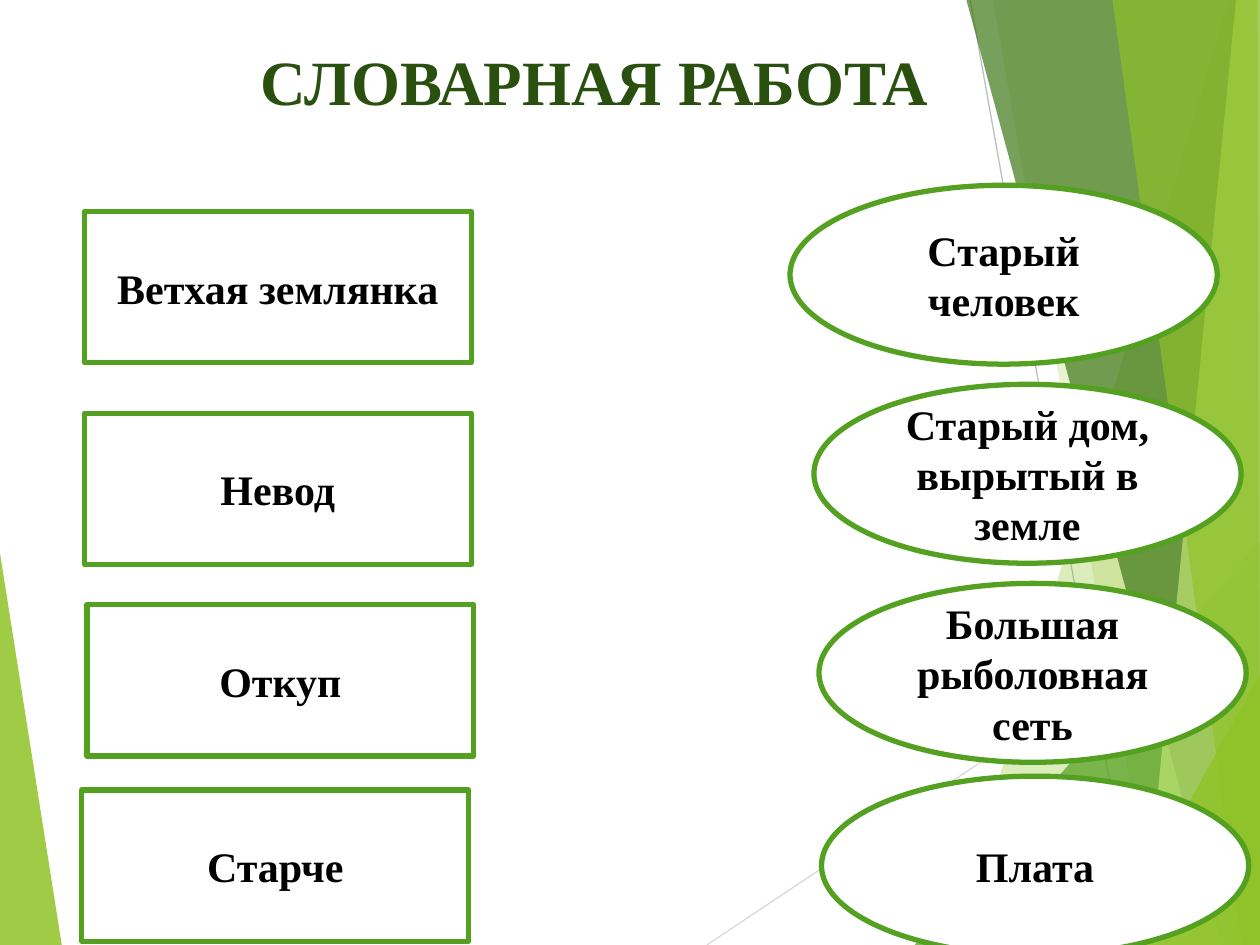
from dataclasses import dataclass

from lxml import etree
from pptx import Presentation
from pptx.dml.color import RGBColor
from pptx.enum.shapes import MSO_CONNECTOR, MSO_SHAPE
from pptx.enum.text import MSO_ANCHOR, PP_ALIGN
from pptx.oxml.ns import qn
from pptx.util import Inches, Pt

RECT = MSO_SHAPE.RECTANGLE
OVAL = MSO_SHAPE.OVAL
LINE = MSO_CONNECTOR.STRAIGHT
CENTER = PP_ALIGN.CENTER
TOP = MSO_ANCHOR.TOP
MIDDLE = MSO_ANCHOR.MIDDLE

FONT = "Times New Roman"
LIME, GREEN, WHITE = "90C226", "54A021", "FFFFFF"
WIDE, HIGH = 10, 7.5


@dataclass
class Facet:
    points: list[tuple[float, float]]
    color: str
    alpha: int


@dataclass
class Ray:
    start: tuple[float, float]
    end: tuple[float, float]
    color: str


@dataclass
class Group:
    kind: MSO_SHAPE
    width: float
    height: float
    cards: list[tuple[float, float, str]]


LEAF = Facet([(0, 4.39), (0.49, HIGH), (0, HIGH)], LIME, 85)
RAYS = [
    Ray((5.61, HIGH), (WIDE, 4.57), "D9D9D9"),
    Ray((7.7, 0), (9.04, HIGH), "BFBFBF"),
]


def band(top: float, foot: float, color: str, alpha: int) -> Facet:
    return Facet([(top, 0), (foot, HIGH), (WIDE, HIGH), (WIDE, 0)], color, alpha)


def wedge(foot: float, rise: float, color: str, alpha: int) -> Facet:
    return Facet([(foot, HIGH), (WIDE, rise), (WIDE, HIGH)], color, alpha)


FACETS = [
    band(9.75, 7.54, LIME, 30),
    band(7.88, 9.19, LIME, 20),
    wedge(7.26, 4.29, GREEN, 72),
    band(7.67, 9.7, "3F7819", 70),
    band(9.81, 9.07, "C0E474", 70),
    Facet([(8.83, 0), (9.86, HIGH), (WIDE, HIGH), (9.98, 0)], LIME, 65),
    wedge(8.81, 5.35, LIME, 80),
]

GROUPS = [
    Group(RECT, 3.07, 1.2, [
        (0.67, 1.68, "Ветхая землянка"),
        (0.67, 3.28, "Невод"),
        (0.69, 4.8, "Откуп"),
        (0.65, 6.27, "Старче"),
    ]),
    Group(OVAL, 3.39, 1.42, [
        (6.27, 1.47, "Старый человек"),
        (6.46, 3.05, "Старый дом, вырытый в земле"),
        (6.5, 4.63, "Большая рыболовная сеть"),
        (6.52, 6.16, "Плата"),
    ]),
]


def paint(target, color: str) -> None:
    target.solid()
    target.fore_color.rgb = RGBColor.from_string(color)


def draw_facet(slide, facet: Facet) -> None:
    points = [(Inches(x), Inches(y)) for x, y in facet.points]
    pen = slide.shapes.build_freeform(*points[0])
    pen.add_line_segments(points[1:], close=True)
    shape = pen.convert_to_shape()
    shape.shadow.inherit = False
    shape.line.fill.background()
    paint(shape.fill, facet.color)
    tint = shape.element.spPr.find(f"{qn('a:solidFill')}/{qn('a:srgbClr')}")
    etree.SubElement(tint, qn("a:alpha"), val=str(facet.alpha * 1000))


def draw_ray(slide, ray: Ray) -> None:
    ends = [Inches(value) for value in ray.start + ray.end]
    line = slide.shapes.add_connector(LINE, *ends)
    paint(line.line.fill, ray.color)
    line.line.width = Pt(0.75)
    etree.SubElement(line.element.spPr, qn("a:effectLst"))


def write(frame, text: str, size: float, color: str, anchor: MSO_ANCHOR) -> None:
    frame.word_wrap = True
    frame.vertical_anchor = anchor
    par = frame.paragraphs[0]
    par.alignment = CENTER
    run = par.add_run()
    run.text = text
    run.font.name = FONT
    run.font.size = Pt(size)
    run.font.bold = True
    paint(run.font.fill, color)


def draw_title(slide, text: str) -> None:
    box = slide.shapes.add_textbox(
        Inches(1.25), Inches(0.23), Inches(6.94), Inches(1.44))
    box.text_frame.margin_top = Inches(0.11)
    write(box.text_frame, text, 36, "2A5010", TOP)


def draw_group(slide, group: Group) -> None:
    for left, top, text in group.cards:
        card = slide.shapes.add_shape(
            group.kind, Inches(left), Inches(top),
            Inches(group.width), Inches(group.height))
        card.shadow.inherit = False
        paint(card.fill, WHITE)
        paint(card.line.fill, GREEN)
        card.line.width = Pt(3)
        write(card.text_frame, text, 24, "000000", MIDDLE)


def main() -> None:
    deck = Presentation()
    deck.slide_width = Inches(WIDE)
    deck.slide_height = Inches(HIGH)
    slide = deck.slides.add_slide(deck.slide_layouts[6])
    paint(slide.background.fill, WHITE)
    draw_facet(slide, LEAF)
    for ray in RAYS:
        draw_ray(slide, ray)
    for facet in FACETS:
        draw_facet(slide, facet)
    draw_title(slide, "СЛОВАРНАЯ РАБОТА")
    for group in GROUPS:
        draw_group(slide, group)
    deck.save("out.pptx")


if __name__ == "__main__":
    main()
